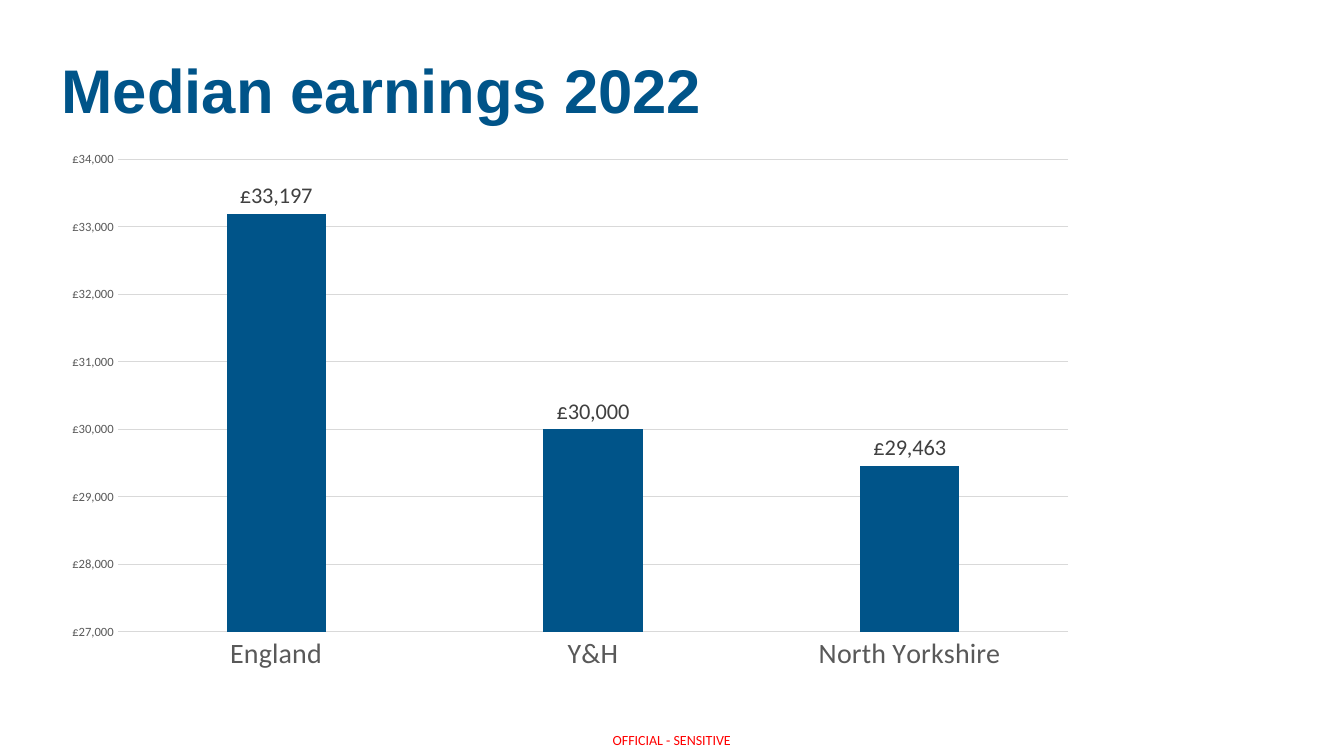
from dataclasses import dataclass

from pptx import Presentation
from pptx.chart.data import CategoryChartData
from pptx.dml.color import RGBColor
from pptx.enum.chart import XL_CHART_TYPE, XL_LABEL_POSITION, XL_TICK_MARK
from pptx.enum.text import MSO_ANCHOR, MSO_AUTO_SIZE, PP_ALIGN
from pptx.util import Cm, Pt

# Content
TITLE = "Median earnings 2022"
MARKING = "OFFICIAL - SENSITIVE"
EARNINGS = {"England": 33197, "Y&H": 30000, "North Yorkshire": 29463}
SERIES_NAME = "Series 1"
POUNDS = '"£"#,##0'
SCALE = (27000, 34000, 1000)

# Left, top, width, height in centimetres
PAGE_SIZE = (33.87, 19.05)
TITLE_AREA = (1.3, 0.79, 29.21, 3.15)
CHART_AREA = (1.3, 3.56, 26.14, 13.61)
MARKING_AREA = (15.44, 18.44, 3.07, 0.43)


@dataclass(frozen=True)
class Theme:
    heading_font: str = "Arial"
    body_font: str = "Calibri"
    blue: str = "005489"
    red: str = "FF0000"
    axis_text: str = "595959"
    label_text: str = "404040"
    grid: str = "D9D9D9"
    title_size: int = 44
    category_size: int = 20
    label_size: int = 16
    marking_size: int = 10
    value_size: int = 9
    line_width: float = 0.75


THEME = Theme()


def set_font(font, size, color, name=THEME.body_font, bold=False):
    font.name, font.size, font.bold = name, Pt(size), bold
    font.color.rgb = RGBColor.from_string(color)


def set_line(line):
    line.color.rgb = RGBColor.from_string(THEME.grid)
    line.width = Pt(THEME.line_width)


def write(box, text, *, align, spacing=1.0, **font_format):
    para = box.text_frame.paragraphs[0]
    para.alignment, para.line_spacing = align, spacing
    span = para.add_run()
    span.text = text
    set_font(span.font, **font_format)


def add_title(page):
    box = page.shapes.title
    box.left, box.top, box.width, box.height = map(Cm, TITLE_AREA)
    frame = box.text_frame
    frame.vertical_anchor = MSO_ANCHOR.MIDDLE
    frame.auto_size = MSO_AUTO_SIZE.NONE
    write(box, TITLE, align=PP_ALIGN.LEFT, spacing=0.9, size=THEME.title_size,
          color=THEME.blue, name=THEME.heading_font, bold=True)


def add_earnings_chart(page):
    data = CategoryChartData(number_format=POUNDS)
    data.categories = list(EARNINGS)
    data.add_series(SERIES_NAME, list(EARNINGS.values()))
    chart = page.shapes.add_chart(
        XL_CHART_TYPE.COLUMN_CLUSTERED, *map(Cm, CHART_AREA), data).chart
    chart.has_title = chart.has_legend = False
    set_font(chart.font, THEME.marking_size, THEME.axis_text)

    # Columns and their labels
    plot = chart.plots[0]
    plot.gap_width, plot.overlap, plot.vary_by_categories = 219, -27, False
    series = plot.series[0]
    series.format.fill.solid()
    series.format.fill.fore_color.rgb = RGBColor.from_string(THEME.blue)
    labels = series.data_labels
    labels.show_value = True
    labels.position = XL_LABEL_POSITION.OUTSIDE_END
    labels.number_format, labels.number_format_is_linked = POUNDS, False
    set_font(labels.font, THEME.label_size, THEME.label_text)

    # Axes
    regions, pounds = chart.category_axis, chart.value_axis
    for axis, size in ((regions, THEME.category_size), (pounds, THEME.value_size)):
        axis.major_tick_mark = axis.minor_tick_mark = XL_TICK_MARK.NONE
        set_font(axis.tick_labels.font, size, THEME.axis_text)
    set_line(regions.format.line)
    pounds.format.line.fill.background()
    pounds.has_major_gridlines = True
    set_line(pounds.major_gridlines.format.line)
    pounds.minimum_scale, pounds.maximum_scale, pounds.major_unit = SCALE
    pounds.tick_labels.number_format = POUNDS
    pounds.tick_labels.number_format_is_linked = False


def add_marking(page):
    box = page.shapes.add_textbox(*map(Cm, MARKING_AREA))
    frame = box.text_frame
    frame.margin_left = frame.margin_right = 0
    frame.margin_top = frame.margin_bottom = 0
    frame.word_wrap = False
    frame.auto_size = MSO_AUTO_SIZE.SHAPE_TO_FIT_TEXT
    write(box, MARKING, align=PP_ALIGN.LEFT, size=THEME.marking_size, color=THEME.red)


def main():
    deck = Presentation()
    deck.slide_width, deck.slide_height = map(Cm, PAGE_SIZE)
    page = deck.slides.add_slide(deck.slide_layouts[5])
    add_marking(page)
    add_title(page)
    add_earnings_chart(page)
    deck.save("out.pptx")


if __name__ == "__main__":
    main()
